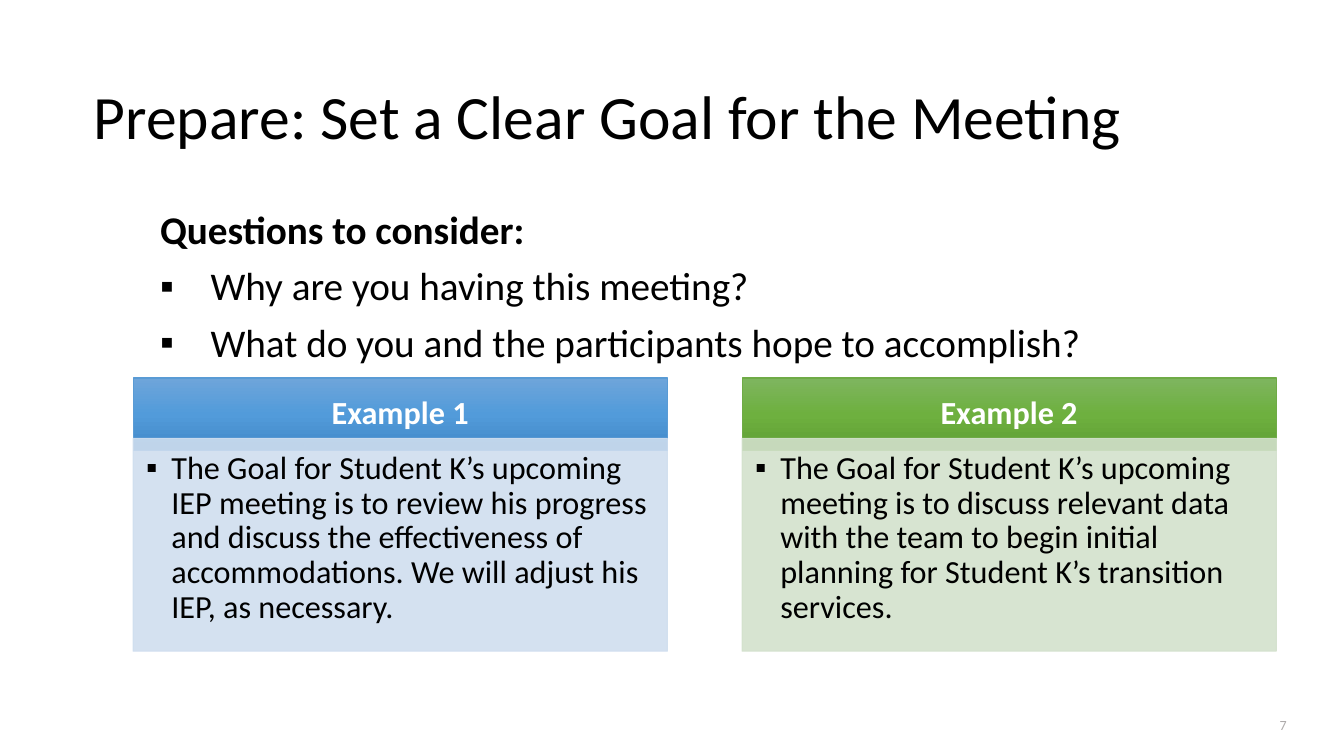
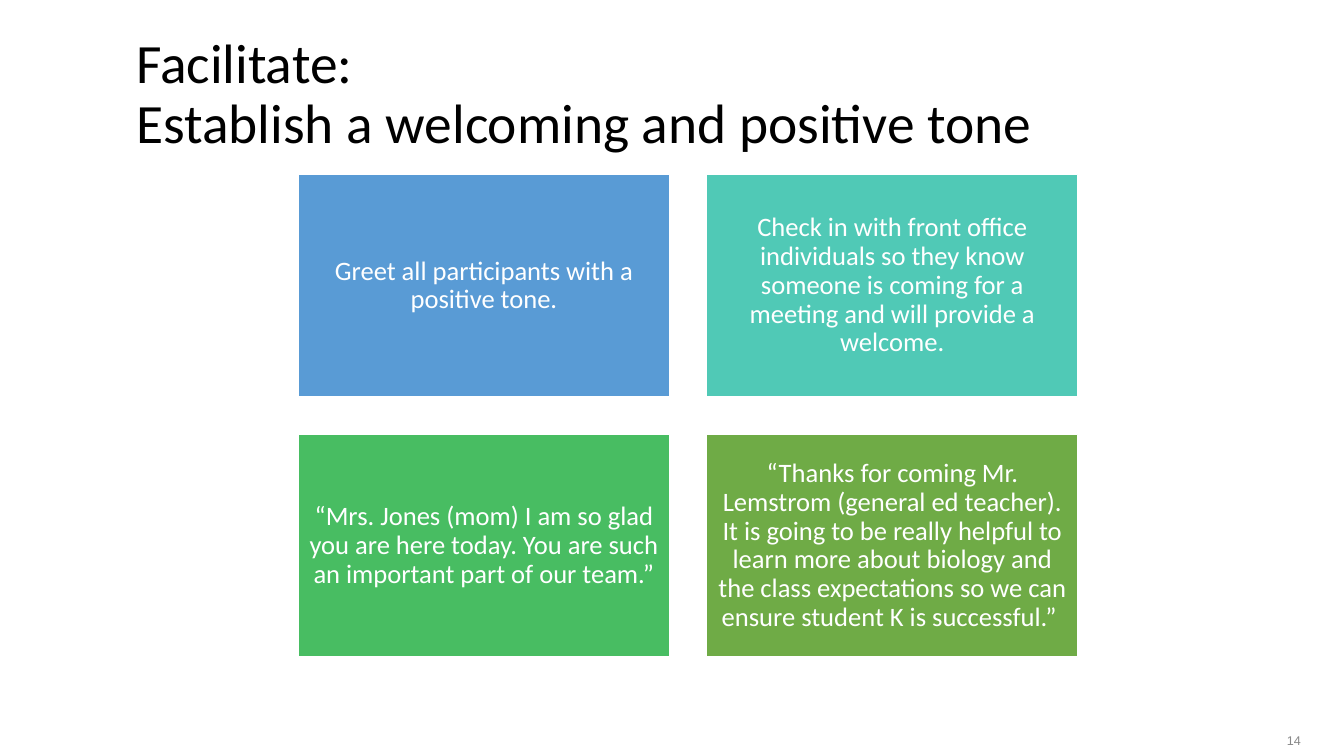
from dataclasses import dataclass

from lxml.etree import SubElement
from pptx import Presentation
from pptx.dml.color import RGBColor
from pptx.enum.shapes import MSO_SHAPE
from pptx.enum.text import MSO_ANCHOR, MSO_AUTO_SIZE, PP_ALIGN
from pptx.oxml.ns import qn
from pptx.util import Inches, Pt


@dataclass(frozen=True)
class Theme:
    font: str = "Calibri"
    alt: str = "Arial"
    black: str = "000000"
    white: str = "FFFFFF"
    blue: str = "599BD5"
    teal: str = "50C9B6"
    mint: str = "48BD62"
    green: str = "6FAB46"
    sky: str = "CFDEEF"
    sage: str = "D3E1CC"
    silver: str = "AEABAB"
    gray: str = "888888"
    blues: tuple = ("6EA5DA", "529BDA", "4188C8")
    greens: tuple = ("7EB55F", "6EB03F", "5F9F34")
    alpha: int = 89
    title: float = 44
    small: float = 39.6
    lead: float = 28
    panel: float = 23
    card: float = 19
    page: float = 10
    foot: float = 9


T = Theme()

GOAL = {
    "title": "Prepare: Set a Clear Goal for the Meeting",
    "lead": "Questions to consider:",
    "asks": [
        "Why are you having this meeting?",
        "What do you and the participants hope to accomplish?",
    ],
    "panels": [
        ("Example 1",
         "The Goal for Student K’s upcoming IEP meeting is to review his progress "
         "and discuss the effectiveness of accommodations. We will adjust his IEP, "
         "as necessary.", T.blues, T.blue, T.sky),
        ("Example 2",
         "The Goal for Student K’s upcoming meeting is to discuss relevant data "
         "with the team to begin initial planning for Student K’s transition "
         "services.", T.greens, T.green, T.sage),
    ],
    "page": "7",
}

TONE = {
    "title": "Facilitate:\vEstablish a welcoming and positive tone",
    "cards": [
        ("Greet all participants with a positive tone.", T.blue),
        ("Check in with front office individuals so they know someone is coming "
         "for a meeting and will provide a welcome.", T.teal),
        ("“Mrs. Jones (mom) I am so glad you are here today. You are such an "
         "important part of our team.”", T.mint),
        ("“Thanks for coming Mr. Lemstrom (general ed teacher). It is going to be "
         "really helpful to learn more about biology and the class expectations so "
         "we can ensure student K is successful.” ", T.green),
    ],
    "page": "14",
}


def rgb(code):
    return RGBColor.from_string(code)


def frame(shape, pad=(0.1, 0.05, 0.1, 0.05), anchor=MSO_ANCHOR.MIDDLE):
    """Set wrapping, insets and anchor of a shape's text."""
    tf = shape.text_frame
    tf.word_wrap = True
    tf.auto_size = MSO_AUTO_SIZE.NONE
    tf.vertical_anchor = anchor
    tf.margin_left, tf.margin_top, tf.margin_right, tf.margin_bottom = map(Inches, pad)
    return tf


def write(para, words, size, color=T.black, bold=False, font=T.font,
          align=PP_ALIGN.LEFT, lead=0.9, before=0, indent=0):
    """Fill one paragraph; an indent in inches also gives it a square bullet."""
    para.text = words
    para.alignment = align
    para.line_spacing = lead
    para.space_before = Pt(before)
    for run in para.runs:
        run.font.name = font
        run.font.size = Pt(size)
        run.font.bold = bold
        run.font.color.rgb = rgb(color)
    if indent:
        props = para._p.get_or_add_pPr()
        props.set("marL", str(Inches(indent)))
        props.set("indent", str(-Inches(indent)))
        tint = SubElement(props, qn("a:buClr"))
        SubElement(tint, qn("a:srgbClr"), val=T.black)
        SubElement(props, qn("a:buFont"), typeface=T.alt)
        SubElement(props, qn("a:buChar"), char="▪")


def place(shape, box):
    shape.left, shape.top, shape.width, shape.height = map(Inches, box)


def start(deck, title, box, size, lead=0.9):
    """Add a title-only slide with its title placed and formatted."""
    slide = deck.slides.add_slide(deck.slide_layouts[5])
    place(slide.shapes.title, box)
    write(frame(slide.shapes.title).paragraphs[0], title, size, lead=lead)
    return slide


def label(slide, box, anchor=MSO_ANCHOR.MIDDLE):
    return frame(slide.shapes.add_textbox(*map(Inches, box)), anchor=anchor)


def block(slide, box, fill, line, width):
    """Add a rectangle; a tuple of colours makes a downward gradient."""
    shape = slide.shapes.add_shape(MSO_SHAPE.RECTANGLE, *map(Inches, box))
    shape.shadow.inherit = False
    shape.line.color.rgb = rgb(line)
    shape.line.width = Pt(width)
    if isinstance(fill, str):
        shape.fill.solid()
        shape.fill.fore_color.rgb = rgb(fill)
        return shape
    shape.fill.gradient()
    shape.fill.gradient_angle = 270
    stops = shape._element.spPr.find(qn("a:gradFill")).find(qn("a:gsLst"))
    for old in list(stops):
        stops.remove(old)
    for i, code in enumerate(fill):
        stop = SubElement(stops, qn("a:gs"), pos=str(100000 * i // (len(fill) - 1)))
        SubElement(stop, qn("a:srgbClr"), val=code)
    return shape


def fade(shape):
    """Make fill and line partly transparent."""
    for color in shape._element.spPr.iter(qn("a:srgbClr")):
        SubElement(color, qn("a:alpha"), val=str(T.alpha * 1000))


def goal(deck):
    slide = start(deck, GOAL["title"], (0.83, 0.14, 12.5, 2), T.title, lead=1.0)
    tf = label(slide, (1.49, 2.04, 11, 1.71), MSO_ANCHOR.TOP)
    write(tf.paragraphs[0], GOAL["lead"], T.lead, bold=True)
    for ask in GOAL["asks"]:
        write(tf.add_paragraph(), ask, T.lead, before=10, indent=0.5)
    left, wide, step = 1.32, 5.3, 6.04
    for i, (name, words, grad, edge, pale) in enumerate(GOAL["panels"]):
        x = left + i * step
        head = block(slide, (x, 3.75, wide, 0.72), grad, edge, 0.75)
        write(frame(head, (0.18, 0.1, 0.18, 0.1)).paragraphs[0], name, T.panel,
              color=T.white, bold=True, align=PP_ALIGN.CENTER)
        body = block(slide, (x, 4.35, wide, 2.11), pale, pale, 0.75)
        fade(body)
        tf = frame(body, (0.13, 0.13, 0.18, 0.2), MSO_ANCHOR.TOP)
        write(tf.paragraphs[0], words, T.panel, indent=0.25)
    page = label(slide, (12.44, 6.99, 0.42, 0.4))
    write(page.paragraphs[0], GOAL["page"], T.page, color=T.silver,
          align=PP_ALIGN.RIGHT, lead=1.0)


def tone(deck):
    slide = start(deck, TONE["title"], (1.25, 0.3, 12.02, 1.3), T.small)
    left, top, wide, high, gap = 2.96, 1.73, 3.68, 2.21, 0.37
    for i, (words, fill) in enumerate(TONE["cards"]):
        row, col = divmod(i, 2)
        box = (left + col * (wide + gap), top + row * (high + gap), wide, high)
        card = block(slide, box, fill, T.white, 1)
        write(frame(card, (0.08,) * 4).paragraphs[0], words, T.card,
              color=T.white, align=PP_ALIGN.CENTER)
    page = label(slide, (11.72, 7.12, 1.28, 0.35), MSO_ANCHOR.BOTTOM)
    write(page.paragraphs[0], TONE["page"], T.foot, color=T.gray, font=T.alt,
          align=PP_ALIGN.RIGHT, lead=1.0)


def main():
    deck = Presentation()
    deck.slide_width, deck.slide_height = Inches(13.33), Inches(7.5)
    goal(deck)
    tone(deck)
    deck.save("out.pptx")


if __name__ == "__main__":
    main()
